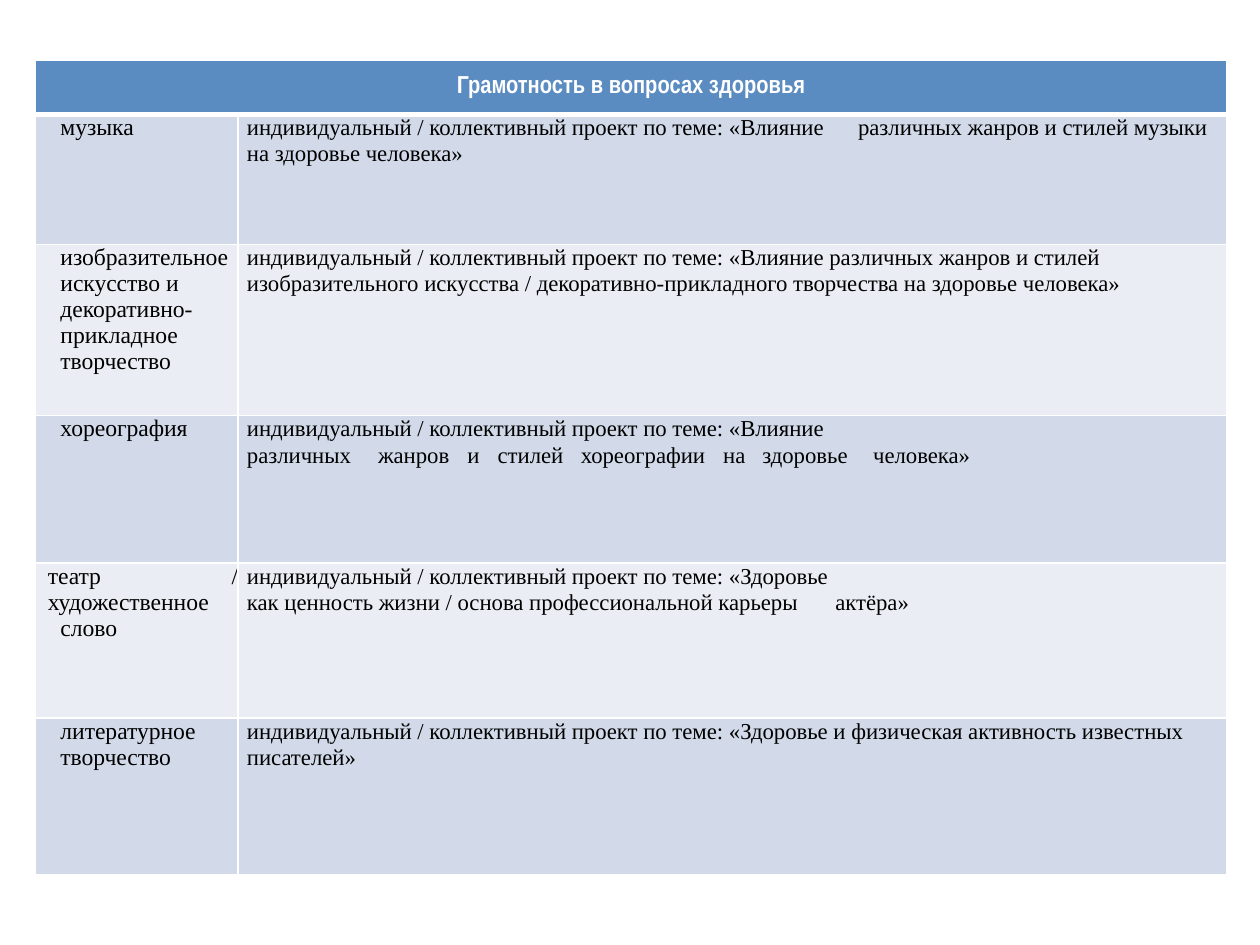
from dataclasses import dataclass

from lxml.etree import SubElement
from pptx import Presentation
from pptx.dml.color import RGBColor as Color
from pptx.enum.text import MSO_ANCHOR as Anchor, PP_ALIGN as Align
from pptx.oxml.ns import qn
from pptx.util import Inches, Pt

HEADING = "Грамотность в вопросах здоровья"
PROJECT = "индивидуальный / коллективный проект по теме: "
ROWS = [
    (["музыка"],
     [PROJECT + "«Влияние\tразличных жанров и стилей музыки на здоровье человека»"]),
    (["изобразительное искусство и", "декоративно-прикладное творчество"],
     [PROJECT + "«Влияние различных жанров и стилей изобразительного искусства / "
      "декоративно-прикладного творчества на здоровье человека»"]),
    (["хореография"],
     [PROJECT + "«Влияние",
      "различных\tжанров\tи\tстилей\tхореографии\tна\tздоровье\tчеловека»"]),
    (["театр / художественное", "слово"],
     [PROJECT + "«Здоровье",
      "как ценность жизни / основа профессиональной карьеры\tактёра»"]),
    (["литературное творчество"],
     [PROJECT + "«Здоровье и физическая активность известных писателей»"]),
]
TAB_STOPS = {
    "индивидуальный": [4.85],
    "различных": [1.04, 1.75, 1.99, 2.65, 3.78, 4.09, 4.97],
    "как": [4.67],
}
INDENTS = {"театр": 0.1}
LEFT, TOP = 0.28, 0.48
COLUMNS = [1.61, 7.85]
HEIGHTS = [0.43, 1.03, 1.36, 1.17, 1.23, 1.24]


@dataclass(frozen=True)
class Theme:
    header: str = "5B8CC1"
    bands: tuple = ("D2DAE9", "EAEEF4")
    line: str = "FFFFFF"
    light: str = "FFFFFF"
    dark: str = "000000"
    heading_font: str = "Arial Narrow"
    body_font: str = "Times New Roman"
    heading_size: float = 14
    label_size: float = 13.5
    body_size: float = 13
    leading: float = 14.9


THEME = Theme()


def paint(cell, color, bottom=1):
    properties = cell._tc.get_or_add_tcPr()
    for side, width in (("L", 1), ("R", 1), ("T", 1), ("B", bottom)):
        edge = SubElement(properties, qn(f"a:ln{side}"), w=str(Pt(width)))
        fill = SubElement(edge, qn("a:solidFill"))
        SubElement(fill, qn("a:srgbClr"), val=THEME.line)
    cell.fill.solid()
    cell.fill.fore_color.rgb = Color.from_string(color)


def style(para, name, size, color, bold=False):
    font = para.font
    font.name, font.size, font.bold = name, Pt(size), bold
    font.color.rgb = Color.from_string(color)


def write(cell, lines, size, indent, align):
    cell.margin_left = cell.margin_right = cell.margin_top = cell.margin_bottom = 0
    frame = cell.text_frame
    for number, line in enumerate(lines):
        para = frame.add_paragraph() if number else frame.paragraphs[0]
        para.text = line
        para.alignment = align
        para.line_spacing = Pt(THEME.leading)
        first_word = line.split()[0]
        properties = para._p.get_or_add_pPr()
        properties.set("marL", str(Inches(INDENTS.get(first_word, indent))))
        if "\t" in line:
            stops = SubElement(properties, qn("a:tabLst"))
            for stop in TAB_STOPS[first_word]:
                SubElement(stops, qn("a:tab"), pos=str(Inches(stop)), algn="l")
        style(para, THEME.body_font, size, THEME.dark)


def main():
    deck = Presentation()
    deck.slide_width, deck.slide_height = Inches(10), Inches(7.5)
    page = deck.slides.add_slide(deck.slide_layouts[6])
    table = page.shapes.add_table(
        len(HEIGHTS), len(COLUMNS), Inches(LEFT), Inches(TOP),
        Inches(sum(COLUMNS)), Inches(sum(HEIGHTS))).table
    for column, width in zip(table.columns, COLUMNS):
        column.width = Inches(width)
    for row, height in zip(table.rows, HEIGHTS):
        row.height = Inches(height)

    heading = table.cell(0, 0)
    heading.merge(table.cell(0, 1))
    for cell in table.rows[0].cells:
        paint(cell, THEME.header, bottom=3)
    heading.vertical_anchor = Anchor.MIDDLE
    para = heading.text_frame.paragraphs[0]
    para.text = HEADING
    para.alignment = Align.CENTER
    style(para, THEME.heading_font, THEME.heading_size, THEME.light, bold=True)

    for number, (labels, projects) in enumerate(ROWS, start=1):
        label, project = table.rows[number].cells
        for cell in (label, project):
            paint(cell, THEME.bands[(number - 1) % 2])
        write(label, labels, THEME.label_size, 0.2, Align.JUSTIFY)
        write(project, projects, THEME.body_size, 0.07, Align.LEFT)

    deck.save("out.pptx")


if __name__ == "__main__":
    main()
